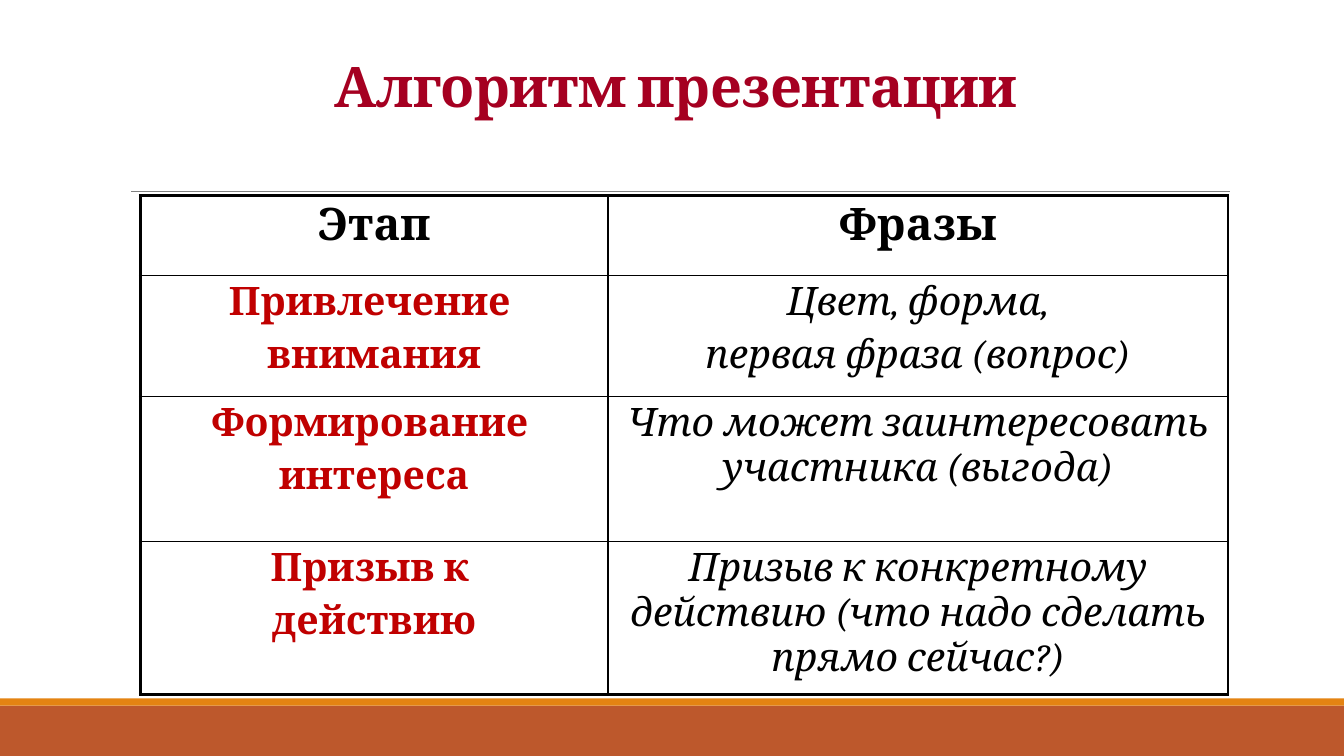
from lxml import etree
from pptx import Presentation
from pptx.dml.color import RGBColor
from pptx.enum.shapes import MSO_CONNECTOR, MSO_SHAPE
from pptx.enum.text import MSO_ANCHOR, PP_ALIGN
from pptx.oxml.ns import qn
from pptx.util import Inches, Pt

CENTER = PP_ALIGN.CENTER
BOTTOM = MSO_ANCHOR.BOTTOM
RECTANGLE = MSO_SHAPE.RECTANGLE
STRAIGHT = MSO_CONNECTOR.STRAIGHT

SLIDE_WIDTH, SLIDE_HEIGHT = 13.33, 7.5
FONT_NAME = "Cambria"
COLORS = {
    "title": "A50021",
    "stage": "C00000",
    "ink": "000000",
    "rule": "808080",
    "band": "BD582C",
    "stripe": "E48312",
}
FORMATS = {
    "title": {"size": Pt(40), "bold": True, "italic": False},
    "header": {"size": Pt(32), "bold": True, "italic": False},
    "stage": {"size": Pt(28), "bold": True, "italic": False},
    "phrase": {"size": Pt(28), "bold": False, "italic": True},
}

COLUMN_WIDTHS = [4.64, 6.15]
ROW_HEIGHTS = [0.79, 1.2, 1.44, 1.52]
OUTER_BORDER, INNER_BORDER = 2.25, 1
# Each cell is a list of paragraphs
ROWS = [
    (["Этап"], ["Фразы"]),
    (["Привлечение ", "внимания"], ["Цвет, форма,", "первая фраза (вопрос)"]),
    (["Формирование ", "интереса"], ["Что может заинтересовать участника (выгода)"]),
    (["Призыв к ", "действию"],
     ["Призыв к конкретному действию (что надо сделать прямо сейчас?)"]),
]


def color(name):
    return RGBColor.from_string(COLORS[name])


def add_text(paragraph, text, style, color_name):
    paragraph.alignment = CENTER
    run = paragraph.add_run()
    run.text = text
    run.font.name = FONT_NAME
    run.font.color.rgb = color(color_name)
    for attribute, value in FORMATS[style].items():
        setattr(run.font, attribute, value)
    return run


def add_footer(slide, left, top, width, height):
    """Thin stripe above a wide band."""
    stripe_height = 0.07
    parts = [
        ("band", top + stripe_height, height - stripe_height),
        ("stripe", top, stripe_height),
    ]
    for color_name, part_top, part_height in parts:
        shape = slide.shapes.add_shape(
            RECTANGLE, Inches(left), Inches(part_top), Inches(width), Inches(part_height))
        shape.shadow.inherit = False
        shape.fill.solid()
        shape.fill.fore_color.rgb = color(color_name)
        shape.line.fill.background()


def add_rule(slide, left, top, width):
    rule = slide.shapes.add_connector(
        STRAIGHT, Inches(left), Inches(top), Inches(left + width), Inches(top))
    rule.line.color.rgb = color("rule")
    rule.line.width = Pt(0.5)
    etree.SubElement(rule._element.spPr, qn("a:effectLst"))


def add_title(slide, left, top, width, height):
    box = slide.shapes.add_textbox(Inches(left), Inches(top), Inches(width), Inches(height))
    frame = box.text_frame
    frame.word_wrap = True
    frame.vertical_anchor = BOTTOM
    paragraph = frame.paragraphs[0]
    paragraph.line_spacing = 0.85
    run = add_text(paragraph, "Алгоритм презентации", "title", "title")
    run.font._element.set("spc", "-50")


def set_borders(cell, widths):
    """Border lines must come before the fill in the cell properties."""
    properties = cell._tc.get_or_add_tcPr()
    for position, (tag, width) in enumerate(widths.items()):
        line = etree.Element(qn(f"a:{tag}"), w=str(Pt(width)))
        fill = etree.SubElement(line, qn("a:solidFill"))
        etree.SubElement(fill, qn("a:srgbClr"), val=COLORS["ink"])
        properties.insert(position, line)


def fill_cell(cell, texts, style, color_name):
    cell.fill.background()
    cell.margin_left = cell.margin_right = Inches(0.1)
    cell.margin_top = cell.margin_bottom = Inches(0.05)
    frame = cell.text_frame
    for index, text in enumerate(texts):
        paragraph = frame.add_paragraph() if index else frame.paragraphs[0]
        paragraph.space_before = Pt(0.2 * FORMATS[style]["size"].pt)
        add_text(paragraph, text, style, color_name)


def add_stage_table(slide, left, top):
    last_row, last_column = len(ROWS) - 1, len(COLUMN_WIDTHS) - 1
    table = slide.shapes.add_table(
        len(ROWS), len(COLUMN_WIDTHS), Inches(left), Inches(top),
        Inches(sum(COLUMN_WIDTHS)), Inches(sum(ROW_HEIGHTS))).table
    table.first_row = table.horz_banding = False
    for column, width in zip(table.columns, COLUMN_WIDTHS):
        column.width = Inches(width)
    for row, height in zip(table.rows, ROW_HEIGHTS):
        row.height = Inches(height)

    for row_index, row_texts in enumerate(ROWS):
        for column_index, texts in enumerate(row_texts):
            cell = table.cell(row_index, column_index)
            if row_index == 0:
                style, color_name = "header", "ink"
            elif column_index == 0:
                style, color_name = "stage", "stage"
            else:
                style, color_name = "phrase", "ink"
            fill_cell(cell, texts, style, color_name)
            on_edge = {
                "lnL": column_index == 0,
                "lnR": column_index == last_column,
                "lnT": row_index == 0,
                "lnB": row_index == last_row,
            }
            set_borders(cell, {tag: OUTER_BORDER if edge else INNER_BORDER
                               for tag, edge in on_edge.items()})


def main():
    presentation = Presentation()
    presentation.slide_width = Inches(SLIDE_WIDTH)
    presentation.slide_height = Inches(SLIDE_HEIGHT)
    slide = presentation.slides.add_slide(presentation.slide_layouts[6])

    add_footer(slide, 0, 6.93, SLIDE_WIDTH, 0.57)
    add_rule(slide, 1.3, 1.9, 10.9)
    add_title(slide, 0.84, 0.44, 11.73, 0.79)
    add_stage_table(slide, 1.39, 1.94)

    presentation.save("out.pptx")


if __name__ == "__main__":
    main()
